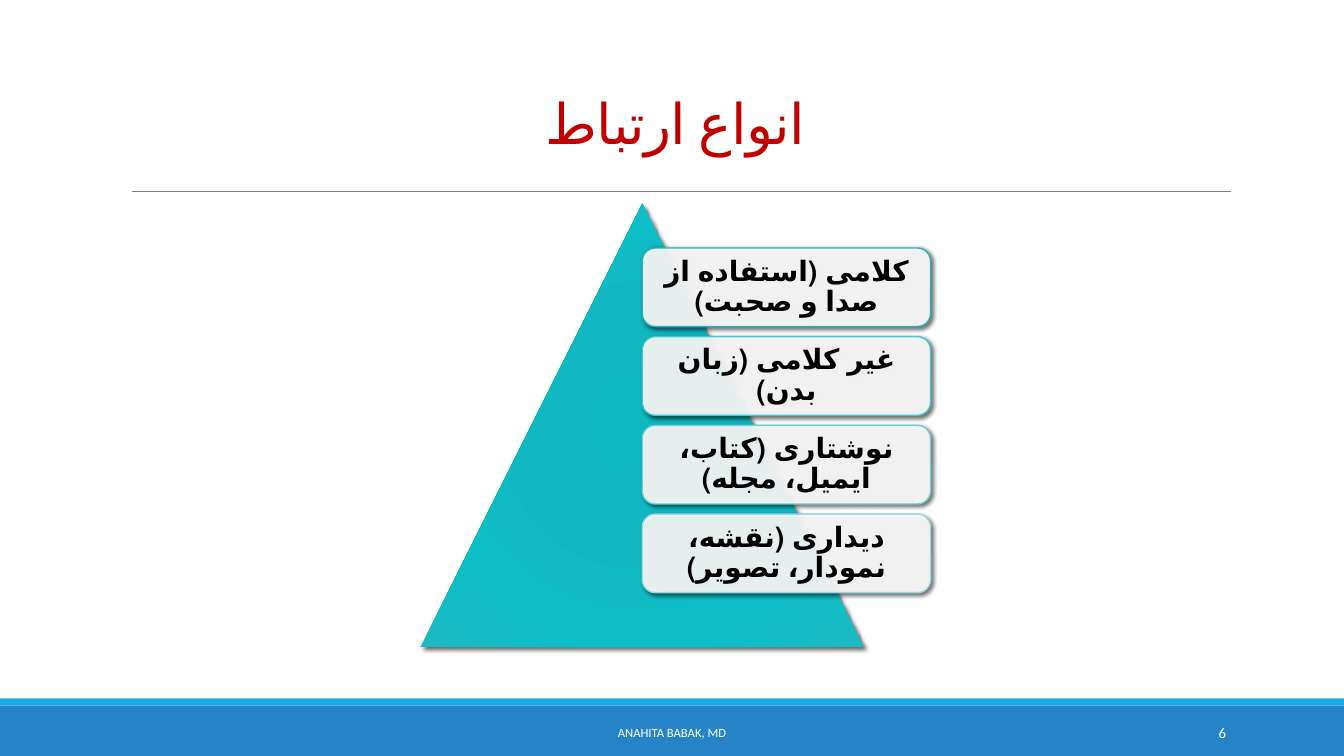
from lxml import etree
from pptx import Presentation
from pptx import util as u
from pptx.dml.color import RGBColor
from pptx.enum import lang, shapes, text
from pptx.oxml import parse_xml
from pptx.oxml.ns import nsdecls, qn

RED = RGBColor(0xC0, 0x00, 0x00)
BLACK = RGBColor(0x00, 0x00, 0x00)
WHITE = RGBColor(0xFF, 0xFF, 0xFF)
GREY = RGBColor(0x80, 0x80, 0x80)
BLUE = RGBColor(0x26, 0x83, 0xC6)
SKY = RGBColor(0x1C, 0xAD, 0xE4)
TEAL_STOPS = [
    (0, RGBColor(0x0D, 0xB9, 0xC1)),
    (34, RGBColor(0x11, 0xB7, 0xC0)),
    (70, RGBColor(0x0D, 0xBD, 0xC6)),
    (100, RGBColor(0x1D, 0xB9, 0xC1)),
]
CARDS = [
    ("کلامی (استفاده از صدا و صحبت)", RGBColor(0x24, 0xB2, 0xB9)),
    ("غیر کلامی (زبان بدن)", RGBColor(0x3F, 0xC9, 0xD1)),
    ("نوشتاری (کتاب، ایمیل، مجله)", RGBColor(0x6E, 0xCF, 0xD5)),
    ("دیداری (نقشه، نمودار، تصویر)", RGBColor(0x9A, 0xD8, 0xDD)),
]
CENTER, RIGHT = text.PP_ALIGN.CENTER, text.PP_ALIGN.RIGHT
MIDDLE, BOTTOM = text.MSO_ANCHOR.MIDDLE, text.MSO_ANCHOR.BOTTOM


def inches(*values):
    """Convert numbers to lengths."""
    return [u.Inches(v) for v in values]


def apply(obj, **values):
    """Set every given attribute on an object."""
    for name, value in values.items():
        setattr(obj, name, value)


def write(sp, words, size, color, align=CENTER, anchor=MIDDLE, inset=0.1,
          spacing=1.0, bold=False, rtl=False):
    """Fill a shape with one formatted paragraph and return its run."""
    tf = sp.text_frame
    apply(tf, word_wrap=True, auto_size=text.MSO_AUTO_SIZE.NONE,
          vertical_anchor=anchor, margin_left=u.Inches(inset),
          margin_right=u.Inches(inset))
    p = tf.paragraphs[0]
    apply(p, alignment=align, line_spacing=spacing)
    r = p.add_run()
    r.text = words
    apply(r.font, name="Calibri", size=u.Pt(size), bold=bold)
    r.font.color.rgb = color
    if rtl:
        p._p.get_or_add_pPr().set("rtl", "1")
        r.font.language_id = lang.MSO_LANGUAGE_ID.FARSI
    return r


def add_block(slide, kind, box, color):
    """Add a borderless solid shape without shadow."""
    sp = slide.shapes.add_shape(kind, *inches(*box))
    sp.shadow.inherit = False
    sp.fill.solid()
    sp.fill.fore_color.rgb = color
    sp.line.fill.background()
    return sp


def cast_shadow(sp):
    """Give a shape a soft shadow to the lower right."""
    effects = sp._element.spPr.find(qn("a:effectLst"))
    effects.append(parse_xml(
        f'<a:outerShdw {nsdecls("a")} blurRad="{u.Pt(3)}" dist="{u.Pt(2)}" '
        'dir="2700000" algn="tl" rotWithShape="0"><a:srgbClr val="000000">'
        '<a:alpha val="60000"/></a:srgbClr></a:outerShdw>'))


def add_title(slide, x, y, w, h):
    """Place the title and the rule under it."""
    sp = slide.shapes.title
    apply(sp, **dict(zip(("left", "top", "width", "height"),
                         inches(x, y, w, h))))
    r = write(sp, "انواع ارتباط", 40, RED, anchor=BOTTOM, spacing=0.85,
              rtl=True)
    r.font._element.set("spc", "-50")
    rule_y = y + h + 0.3
    rule = slide.shapes.add_connector(
        shapes.MSO_CONNECTOR.STRAIGHT,
        *inches(x + 0.11, rule_y, x + w + 0.01, rule_y))
    rule.line.color.rgb = GREY
    rule.line.width = u.Pt(0.5)
    etree.SubElement(rule._element.spPr, qn("a:effectLst"))


def add_footer(slide, x, y, w, h):
    """Draw the footer band with the author and slide number."""
    rect = shapes.MSO_SHAPE.RECTANGLE
    add_block(slide, rect, (x, y + 0.07, w, h - 0.07), BLUE)
    add_block(slide, rect, (x, y, w, 0.07), SKY)
    for words, left, width, size, align in (
            ("ANAHITA BABAK, MD", 4.03, 5.27, 9, CENTER),
            ("6", 10.83, 1.43, 10.5, RIGHT)):
        sp = slide.shapes.add_textbox(
            *inches(x + left, y + 0.14, width, 0.4))
        write(sp, words, size, WHITE, align=align)


def add_pyramid(slide, x, y, side):
    """Draw the triangle and its column of cards."""
    triangle = add_block(slide, shapes.MSO_SHAPE.ISOSCELES_TRIANGLE,
                         (x, y, side, side), TEAL_STOPS[0][1])
    stops = "".join(f'<a:gs pos="{pos * 1000}"><a:srgbClr val="{color}"/></a:gs>'
                    for pos, color in TEAL_STOPS)
    spPr = triangle._element.spPr
    spPr.replace(spPr.find(qn("a:solidFill")), parse_xml(
        f'<a:gradFill {nsdecls("a")} rotWithShape="1"><a:gsLst>{stops}</a:gsLst>'
        '<a:path path="circle"><a:fillToRect l="100000" t="100000" '
        'r="100000" b="100000"/></a:path></a:gradFill>'))
    cast_shadow(triangle)
    for i, (words, color) in enumerate(CARDS):
        box = (x + side / 2, y + side / 10 + i * side / 5, side * 0.65, 0.78)
        add_card(slide, box, words, color)


def add_card(slide, box, words, color):
    """Draw one translucent rounded card."""
    sp = add_block(slide, shapes.MSO_SHAPE.ROUNDED_RECTANGLE, box, WHITE)
    alpha = etree.SubElement(
        sp._element.spPr.find(qn("a:solidFill"))[0], qn("a:alpha"))
    alpha.set("val", "90000")
    sp.line.color.rgb = color
    sp.line.width = u.Pt(1)
    cast_shadow(sp)
    write(sp, words, 20, BLACK, inset=0.12, spacing=0.9, bold=True, rtl=True)


def main():
    """Build and save the slide."""
    prs = Presentation()
    apply(prs, slide_width=u.Inches(13.33), slide_height=u.Inches(7.5))
    slide = prs.slides.add_slide(prs.slide_layouts[5])
    add_footer(slide, 0, 6.93, 13.33, 0.57)
    add_title(slide, 1.2, 0.31, 11, 1.29)
    add_pyramid(slide, 4.17, 2.02, 4.4)
    prs.save("out.pptx")


if __name__ == "__main__":
    main()
